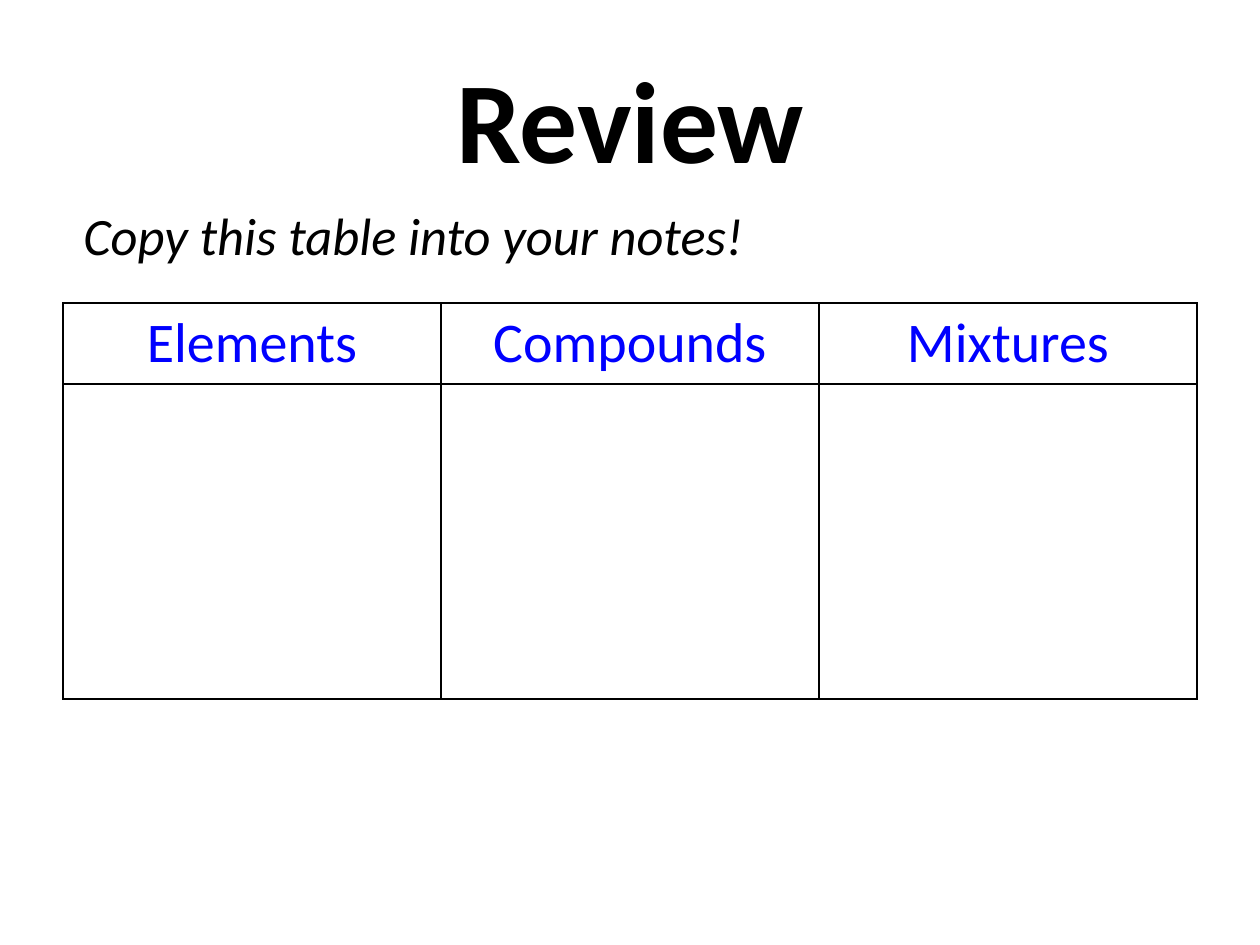
from lxml.etree import SubElement
from pptx import Presentation
from pptx.dml.color import RGBColor
from pptx.enum.text import MSO_ANCHOR, MSO_AUTO_SIZE, PP_ALIGN
from pptx.oxml.ns import qn
from pptx.util import Inches, Pt

PX_PER_INCH = 126


def px(length):
    return round(length * Inches(1) / PX_PER_INCH)


def color(value):
    return RGBColor.from_string(value)


def apply_format(target, values):
    for name, value in values.items():
        setattr(target, name, value)


class SlideBuilder:
    font_name = "Calibri"
    black = "000000"
    blue = "0000FF"
    border_width = Pt(1)

    def __init__(self, presentation):
        self.slide = presentation.slides.add_slide(presentation.slide_layouts[5])

    def add_text(self, text_frame, text, size, text_color, align=PP_ALIGN.CENTER, **font_format):
        paragraph = text_frame.paragraphs[0]
        paragraph.alignment = align
        run = paragraph.add_run()
        run.text = text
        apply_format(run.font, {"name": self.font_name, "size": Pt(size), **font_format})
        run.font.color.rgb = color(text_color)

    def title(self, text, left, top, width, height):
        shape = self.slide.shapes.title
        apply_format(shape, {"left": px(left), "top": px(top),
                             "width": px(width), "height": px(height)})
        apply_format(shape.text_frame, {"vertical_anchor": MSO_ANCHOR.MIDDLE,
                                        "auto_size": MSO_AUTO_SIZE.NONE})
        self.add_text(shape.text_frame, text, 66, self.black, bold=True)

    def instruction(self, text, left, top, width, height):
        shape = self.slide.shapes.add_textbox(px(left), px(top), px(width), px(height))
        apply_format(shape.text_frame, {"word_wrap": False,
                                        "auto_size": MSO_AUTO_SIZE.SHAPE_TO_FIT_TEXT})
        self.add_text(shape.text_frame, text, 30, self.black, PP_ALIGN.LEFT, italic=True)

    def table(self, headings, left, top, column_width, row_heights):
        frame = self.slide.shapes.add_table(
            len(row_heights), len(headings), px(left), px(top),
            px(column_width * len(headings)), px(sum(row_heights)))
        table = frame.table
        apply_format(table, {"first_row": False, "horz_banding": False})
        for column in table.columns:
            column.width = px(column_width)
        for row, height in zip(table.rows, row_heights):
            row.height = px(height)
        for cell in table.iter_cells():
            self.border(cell)
            cell.fill.background()
        for column_index, heading in enumerate(headings):
            self.add_text(table.cell(0, column_index).text_frame, heading, 32, self.blue)

    def border(self, cell):
        properties = cell._tc.get_or_add_tcPr()
        for side in ("a:lnL", "a:lnR", "a:lnT", "a:lnB"):
            line = SubElement(properties, qn(side), w=str(self.border_width))
            fill = SubElement(line, qn("a:solidFill"))
            SubElement(fill, qn("a:srgbClr"), val=self.black)


def main():
    presentation = Presentation()
    apply_format(presentation, {"slide_width": px(1260), "slide_height": px(945)})
    builder = SlideBuilder(presentation)
    builder.title("Review", 63, 38, 1134, 158)
    builder.table(["Elements", "Compounds", "Mixtures"], 63, 303, 378, [81, 315])
    builder.instruction("Copy this table into your notes!", 71, 197, 708, 77)
    presentation.save("out.pptx")


if __name__ == "__main__":
    main()
